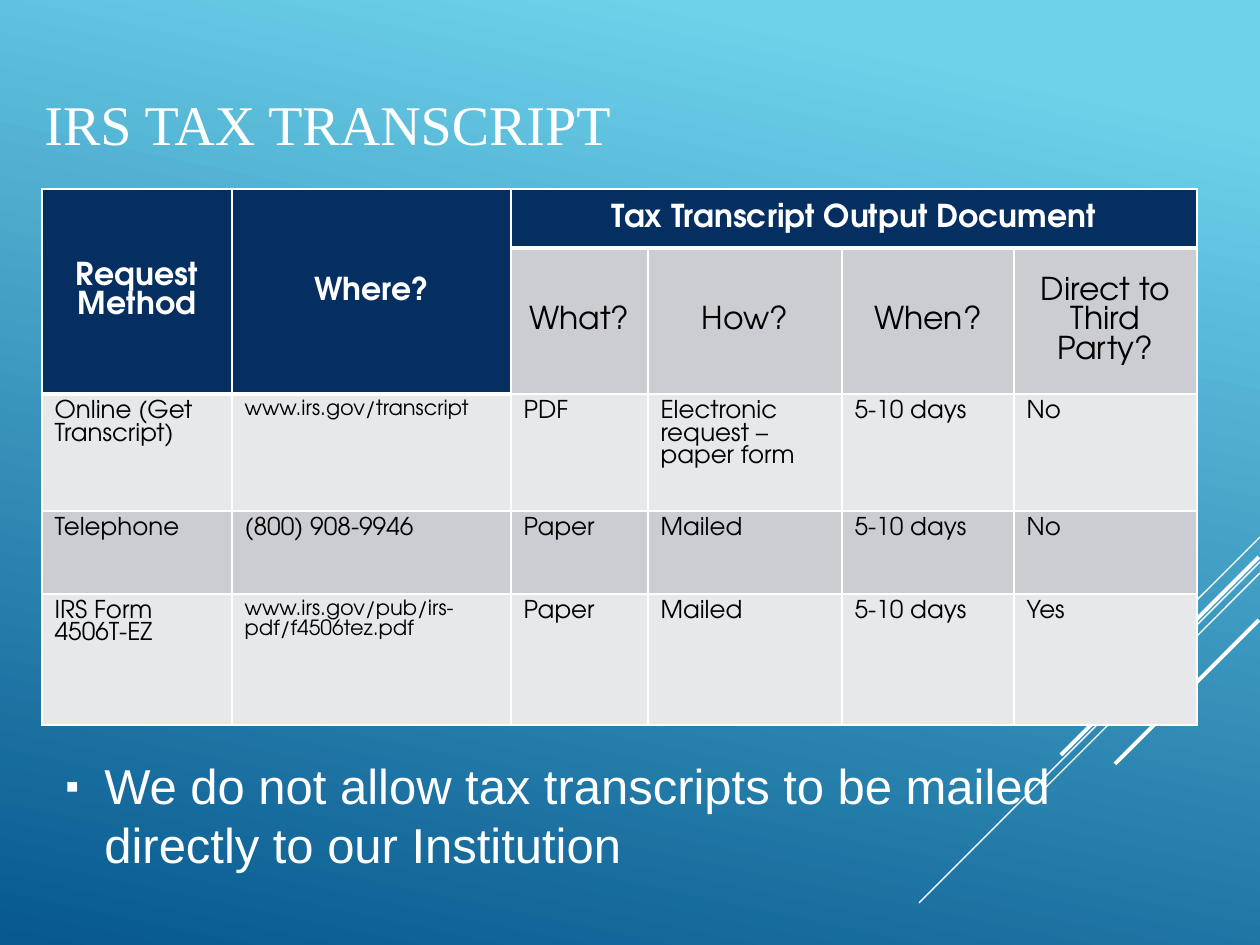
from lxml.etree import SubElement
from pptx import Presentation
from pptx.dml.color import RGBColor
from pptx.enum.shapes import MSO_CONNECTOR
from pptx.enum.text import MSO_ANCHOR as Anchor, PP_ALIGN as Align
from pptx.oxml.ns import qn
from pptx.util import Pt

PX = 914400 // 126  # one px in EMU

WHITE = RGBColor(0xFF, 0xFF, 0xFF)
BLACK = RGBColor(0, 0, 0)
NAVY = RGBColor(0x05, 0x2F, 0x61)
GREY = RGBColor(0xCC, 0xCD, 0xD2)
PALE = RGBColor(0xE7, 0xE8, 0xEA)
SKY = RGBColor(0x6E, 0xD2, 0xEB)
DEEP = RGBColor(0x06, 0x58, 0x8E)
TABLE_FONT = "TeX Gyre Adventor"

TITLE = "IRS TAX TRANSCRIPT"
NOTE = "We do not allow tax transcripts to be mailed directly to our Institution"
ROWS = [
    ["Request Method", "Where?", "Tax Transcript Output Document", "", "", ""],
    ["", "", "What?", "How?", "When?", "Direct to Third Party?"],
    ["Online (Get Transcript)", "www.irs.gov/transcript", "PDF",
     "Electronic request – paper form", "5-10 days", "No"],
    ["Telephone", "(800) 908-9946", "Paper", "Mailed", "5-10 days", "No"],
    ["IRS Form 4506T-EZ", "www.irs.gov/pub/irs-pdf/f4506tez.pdf", "Paper",
     "Mailed", "5-10 days", "Yes"],
]
MERGES = [((0, 0), (1, 0)), ((0, 1), (1, 1)), ((0, 2), (0, 5))]
COLUMN_WIDTHS = [190, 279, 137, 194, 172, 183]
ROW_HEIGHTS = [59, 146, 117, 83, 131]
TABLE_LEFT, TABLE_TOP = 42, 189

# Diagonal rays: start x, start y, end x, end y, width in points
RAYS = [
    (1260, 537, 1155, 642, 0.75),
    (1260, 562, 919, 903, 0.75),
    (1260, 573, 1043, 790, 0.75),
    (1259, 557, 1061, 755, 2.25),
    (1259, 620, 1115, 764, 2.25),
]


def add_ray(slide, x1, y1, x2, y2, width):
    ray = slide.shapes.add_connector(
        MSO_CONNECTOR.STRAIGHT, x1 * PX, y1 * PX, x2 * PX, y2 * PX)
    ray.line.color.rgb = WHITE
    ray.line.width = Pt(width)
    SubElement(ray._element.spPr, qn("a:effectLst"))


def add_text(slide, box, text, font, size, anchor):
    frame = slide.shapes.add_textbox(*(length * PX for length in box)).text_frame
    frame.word_wrap = True
    frame.vertical_anchor = anchor
    paragraph = frame.paragraphs[0]
    paragraph.text = text
    style_font(paragraph, font, size, WHITE)
    return frame


def style_font(paragraph, name, size, color, bold=False):
    paragraph.font.name = name
    paragraph.font.size = Pt(size)
    paragraph.font.color.rgb = color
    paragraph.font.bold = bold


def add_bullet(paragraph, indent):
    properties = paragraph._p.get_or_add_pPr()
    properties.set("marL", str(indent * PX))
    properties.set("indent", str(-indent * PX))
    color = SubElement(properties, qn("a:buClr"))
    SubElement(color, qn("a:srgbClr"), val=str(WHITE))
    SubElement(properties, qn("a:buSzPct"), val="80000")
    SubElement(properties, qn("a:buFont"), typeface="Arial")
    SubElement(properties, qn("a:buChar"), char="▪")
    # Bullet settings come before the default run properties
    run_defaults = properties.find(qn("a:defRPr"))
    if run_defaults is not None:
        properties.append(run_defaults)


def set_borders(cell, top, bottom):
    properties = cell._tc.get_or_add_tcPr()
    for side, width in (("L", 1), ("R", 1), ("T", top), ("B", bottom)):
        line = SubElement(properties, qn("a:ln" + side), w=str(Pt(width)))
        fill = SubElement(line, qn("a:solidFill"))
        SubElement(fill, qn("a:srgbClr"), val=str(WHITE))


def is_header(row, column):
    return row == 0 or (row == 1 and column < 2)


def style_cell(cell, row, column, text):
    header = is_header(row, column)
    top = 3 if row and is_header(row - 1, column) and not header else 1
    set_borders(cell, top, 3 if header else 1)
    cell.fill.solid()
    cell.fill.fore_color.rgb = NAVY if header else (GREY if row % 2 else PALE)
    if not text:
        return
    cell.text = text
    paragraph = cell.text_frame.paragraphs[0]
    if row < 2:
        cell.vertical_anchor = Anchor.MIDDLE
        paragraph.alignment = Align.CENTER
        size = 18
    else:
        size = 12 if text.startswith("www.") else 14
    style_font(paragraph, TABLE_FONT, size, WHITE if header else BLACK, header)


def add_table(slide):
    table = slide.shapes.add_table(
        len(ROWS), len(COLUMN_WIDTHS), TABLE_LEFT * PX, TABLE_TOP * PX,
        sum(COLUMN_WIDTHS) * PX, sum(ROW_HEIGHTS) * PX).table
    for column, width in zip(table.columns, COLUMN_WIDTHS):
        column.width = width * PX
    for row, height in zip(table.rows, ROW_HEIGHTS):
        row.height = height * PX
    for first, last in MERGES:
        table.cell(*first).merge(table.cell(*last))
    for row, texts in enumerate(ROWS):
        for column, text in enumerate(texts):
            style_cell(table.cell(row, column), row, column, text)


def main():
    presentation = Presentation()
    presentation.slide_width = 1260 * PX
    presentation.slide_height = 945 * PX
    slide = presentation.slides.add_slide(presentation.slide_layouts[6])

    # Background gradient
    fill = slide.background.fill
    fill.gradient()
    fill.gradient_angle = 360 - 102
    for stop, position, color in zip(fill.gradient_stops, (0.1, 1), (SKY, DEEP)):
        stop.position = position
        stop.color.rgb = color

    # Diagonal rays
    for ray in RAYS:
        add_ray(slide, *ray)

    # Title and note
    add_text(slide, (32, 44, 1040, 158), TITLE, "Times New Roman", 32, Anchor.MIDDLE)
    note = add_text(slide, (53, 756, 1155, 166), NOTE, "Arial", 28, Anchor.TOP)
    note.margin_top = 0
    add_bullet(note.paragraphs[0], 39)

    # Transcript table
    add_table(slide)

    presentation.save("out.pptx")


if __name__ == "__main__":
    main()
